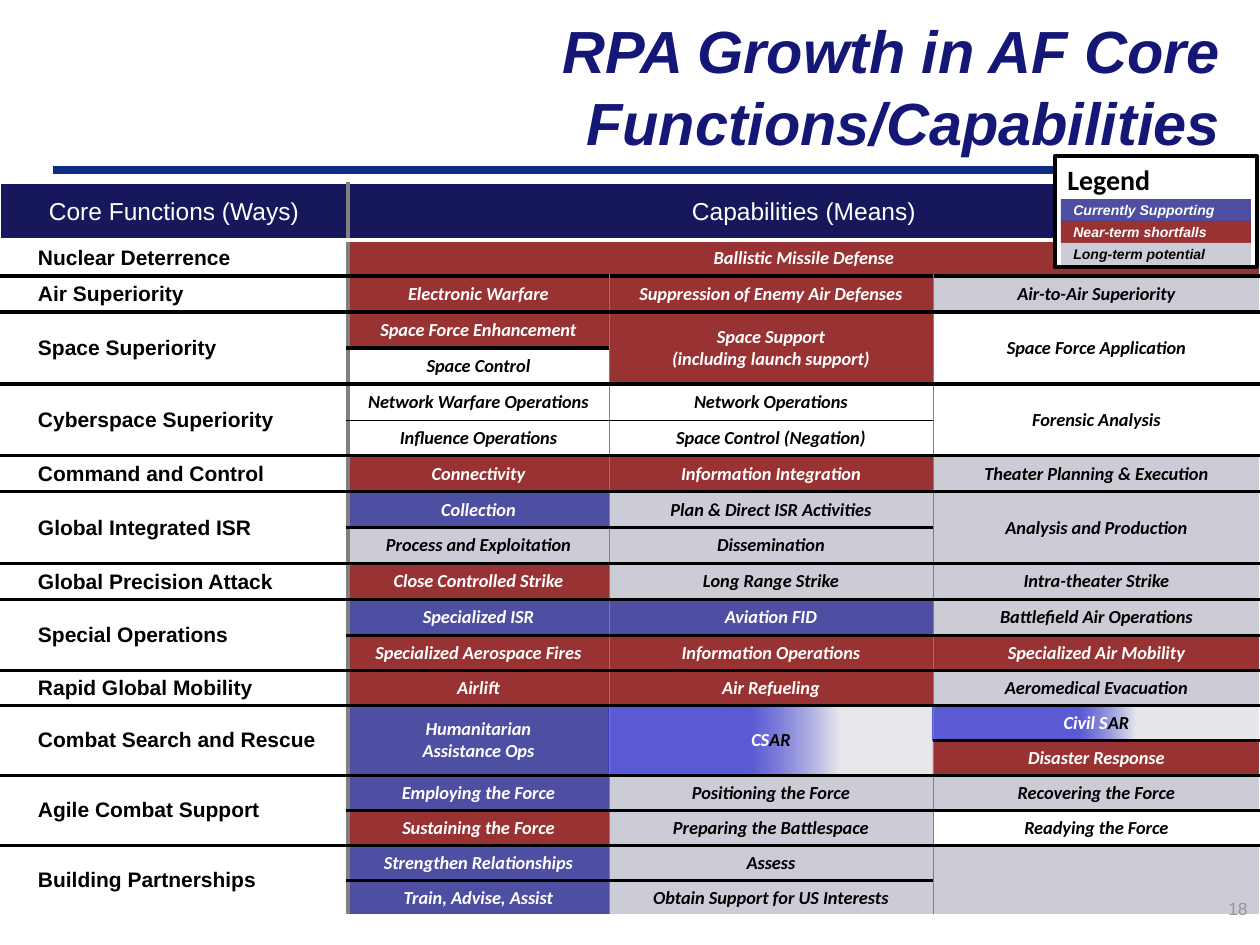
from lxml.etree import SubElement
from pptx import Presentation
from pptx.dml.color import RGBColor
from pptx.enum.shapes import MSO_CONNECTOR, MSO_SHAPE
from pptx.enum.text import MSO_ANCHOR, PP_ALIGN
from pptx.oxml.ns import qn
from pptx.util import Emu, Pt

SCALE = 914400 // 126
COLORS = {
    "white": "FFFFFF", "black": "000000", "grey": "808080", "number": "969696",
    "title": "151777", "rule": "0C2D83", "header": "17175C", "plain": "FFFFFF",
    "now": "22228B", "near": "800000", "later": "CCCCD6",
    "fade start": "3333CC", "fade end": "E7E7EC",
}
SEE_THROUGH = {"now", "near", "fade start"}
FADES = {"wide fade": (0.44, 0.71), "short fade": (0.45, 0.62)}
LIGHT_TEXT = {"now", "near", "header"}
COLUMNS = [348, 261, 324, 327]
ROWS = [57] + [36] * 11 + [35] * 8
ROW_EDGES = {0: ("white", 1), 1: ("white", 3), 6: ("black", 0.25), 20: ("white", 2.25)}
COLUMN_EDGES = [("white", 1), ("grey", 2.25), ("grey", 0.25), ("grey", 0.25), ("white", 1)]
LEGEND = [("now", "Currently Supporting"), ("near", "Near-term shortfalls"),
          ("later", "Long-term potential")]
FUNCTIONS = [
    ("Nuclear Deterrence", [[("near", "Ballistic Missile Defense")]]),
    ("Air Superiority", [
        [("near", "Electronic Warfare"), ("near", "Suppression of Enemy Air Defenses"),
         ("later", "Air-to-Air Superiority")]]),
    ("Space Superiority", [
        [("near", "Space Force Enhancement"), ("near", "Space Support\n(including launch support)"),
         ("plain", "Space Force Application")],
        [("plain", "Space Control"), None, None]]),
    ("Cyberspace Superiority", [
        [("plain", "Network Warfare Operations"), ("plain", "Network Operations"),
         ("plain", "Forensic Analysis")],
        [("plain", "Influence Operations"), ("plain", "Space Control (Negation)"), None]]),
    ("Command and Control", [
        [("near", "Connectivity"), ("near", "Information Integration"),
         ("later", "Theater Planning & Execution")]]),
    ("Global Integrated ISR", [
        [("now", "Collection"), ("later", "Plan & Direct ISR Activities"),
         ("later", "Analysis and Production")],
        [("later", "Process and Exploitation"), ("later", "Dissemination"), None]]),
    ("Global Precision Attack", [
        [("near", "Close Controlled Strike"), ("later", "Long Range Strike"),
         ("later", "Intra-theater Strike")]]),
    ("Special Operations", [
        [("now", "Specialized ISR"), ("now", "Aviation FID"),
         ("later", "Battlefield Air Operations")],
        [("near", "Specialized Aerospace Fires"), ("near", "Information Operations"),
         ("near", "Specialized Air Mobility")]]),
    ("Rapid Global Mobility", [
        [("near", "Airlift"), ("near", "Air Refueling"), ("later", "Aeromedical Evacuation")]]),
    ("Combat Search and Rescue", [
        [("now", "Humanitarian\nAssistance Ops"), ("wide fade", "CS|AR"),
         ("short fade", "Civil S|AR")],
        [None, None, ("near", "Disaster Response")]]),
    ("Agile Combat Support", [
        [("now", "Employing the Force"), ("later", "Positioning the Force"),
         ("later", "Recovering the Force")],
        [("near", "Sustaining the Force"), ("later", "Preparing the Battlespace"),
         ("plain", "Readying the Force")]]),
    ("Building Partnerships", [
        [("now", "Strengthen Relationships"), ("later", "Assess"), ("later", "")],
        [("now", "Train, Advise, Assist"), ("later", "Obtain Support for US Interests"), None]]),
]


def px(length):
    return Emu(length * SCALE)


def rgb(name):
    return RGBColor.from_string(COLORS[name])


class SlideBuilder:
    """Draws styled elements on the current slide."""

    def __init__(self, page):
        self.page = page

    def style(self, paragraph, size, color, font="Arial", bold=False, italic=False, align=PP_ALIGN.LEFT):
        paragraph.alignment = align
        paragraph.font.name = font
        paragraph.font.size = Pt(size)
        paragraph.font.bold = bold
        paragraph.font.italic = italic
        paragraph.font.color.rgb = rgb(color)

    def paint(self, fill, owner, tone):
        if tone in FADES:
            fill.gradient()
            fill.gradient_angle = 0
            for stop, name, position in zip(fill.gradient_stops, ("fade start", "fade end"), FADES[tone]):
                stop.color.rgb = rgb(name)
                stop.position = position
            tone = "fade start"
        else:
            fill.solid()
            fill.fore_color.rgb = rgb(tone)
        if tone in SEE_THROUGH:
            color = next(item for item in owner.iter(qn("a:srgbClr")) if item.get("val") == COLORS[tone])
            SubElement(color, qn("a:alpha"), val="80000")

    def title(self, text, left, top, width, height):
        box = self.page.shapes.title
        box.left, box.top, box.width, box.height = map(px, (left, top, width, height))
        frame = box.text_frame
        frame.text = text
        frame.word_wrap = True
        frame.vertical_anchor = MSO_ANCHOR.BOTTOM
        frame.margin_bottom = px(1)
        self.style(frame.paragraphs[0], 34, "title", bold=True, italic=True, align=PP_ALIGN.RIGHT)

    def rule(self, left, right, y):
        line = self.page.shapes.add_connector(MSO_CONNECTOR.STRAIGHT, px(left), px(y), px(right), px(y))
        line.line.color.rgb = rgb("rule")
        line.line.width = Pt(4.5)
        SubElement(line._element.spPr, qn("a:effectLst"))

    def number(self, text, left, top, width, height):
        box = self.page.shapes.add_textbox(*map(px, (left, top, width, height)))
        box.text_frame.word_wrap = True
        box.text_frame.text = text
        self.style(box.text_frame.paragraphs[0], 10, "number", align=PP_ALIGN.RIGHT)

    def panel(self, group, text, tone, left, top, width, height, anchor=MSO_ANCHOR.MIDDLE, **font):
        box = group.shapes.add_shape(MSO_SHAPE.RECTANGLE, *map(px, (left, top, width, height)))
        box.shadow.inherit = False
        box.line.fill.background()
        self.paint(box.fill, box._element.spPr, tone)
        frame = box.text_frame
        frame.text = text
        frame.vertical_anchor = anchor
        self.style(frame.paragraphs[0], **font)
        return box

    def legend(self, left, top):
        group = self.page.shapes.add_group_shape()
        frame = self.panel(group, "Legend", "white", left, top, 202, 111, MSO_ANCHOR.TOP,
                           size=16, color="black", font="Calibri", bold=True)
        frame.line.color.rgb = rgb("black")
        frame.line.width = Pt(2.25)
        for index, (tone, text) in enumerate(LEGEND):
            color = "white" if tone in LIGHT_TEXT else "black"
            self.panel(group, text, tone, left + 6, top + 43 + 22 * index, 190, 22,
                       size=8, color=color, bold=True, italic=True)

    def cell(self, table, row, column, tone, text, rows=1, columns=1, **font):
        cell = table.cell(row, column)
        if rows * columns > 1:
            cell.merge(table.cell(row + rows - 1, column + columns - 1))
        properties = cell._tc.get_or_add_tcPr()
        edges = [("a:lnL", COLUMN_EDGES[column]), ("a:lnR", COLUMN_EDGES[column + columns])]
        for tag, edge in (("a:lnT", row), ("a:lnB", row + rows)):
            edges.append((tag, ROW_EDGES.get(edge, ("black", 2.25))))
        for tag, (color, width) in edges:
            line = SubElement(properties, qn(tag), w=str(Pt(width)))
            SubElement(SubElement(line, qn("a:solidFill")), qn("a:srgbClr"), val=COLORS[color])
        self.paint(cell.fill, properties, tone)
        cell.vertical_anchor = MSO_ANCHOR.MIDDLE
        cell.margin_top = cell.margin_bottom = px(3)
        if column == 0 and row > 0:
            cell.margin_left = px(38)
        paragraph = cell.text_frame.paragraphs[0]
        color = "white" if tone in LIGHT_TEXT else "black"
        if tone in FADES:
            for part, shade in zip(text.split("|"), ("white", "black")):
                span = paragraph.add_run()
                span.text = part
                span.font.color.rgb = rgb(shade)
        else:
            paragraph.text = text
        self.style(paragraph, color=color, **font)

    def matrix(self, left, top):
        frame = self.page.shapes.add_table(len(ROWS), len(COLUMNS), px(left), px(top),
                                           px(sum(COLUMNS)), px(sum(ROWS)))
        table = frame.table
        table.first_row = table.horz_banding = False
        for column, width in zip(table.columns, COLUMNS):
            column.width = px(width)
        for row, height in zip(table.rows, ROWS):
            row.height = px(height)
        heading = {"size": 14, "align": PP_ALIGN.CENTER}
        self.cell(table, 0, 0, "header", "Core Functions (Ways)", **heading)
        self.cell(table, 0, 1, "header", "Capabilities (Means)", columns=3, **heading)
        first = 1
        for name, lines in FUNCTIONS:
            self.cell(table, first, 0, "plain", name, rows=len(lines), size=12, bold=True)
            for offset, line in enumerate(lines):
                for index, entry in enumerate(line):
                    if entry is None:
                        continue
                    tall = offset + 1 < len(lines) and lines[offset + 1][index] is None
                    self.cell(table, first + offset, index + 1, *entry, rows=2 if tall else 1,
                              columns=3 if len(line) == 1 else 1, size=10.5, font="Calibri",
                              bold=True, italic=True, align=PP_ALIGN.CENTER)
            first += len(lines)


def main():
    deck = Presentation()
    deck.slide_width, deck.slide_height = px(1260), px(945)
    builder = SlideBuilder(deck.slides.add_slide(deck.slide_layouts[5]))
    builder.rule(53, 1207, 170)
    builder.matrix(0, 183)
    builder.title("RPA Growth in AF Core Functions/Capabilities", 249, 8, 984, 150)
    builder.number("18", 1103, 892, 157, 42)
    builder.legend(1055, 156)
    deck.save("out.pptx")


if __name__ == "__main__":
    main()
